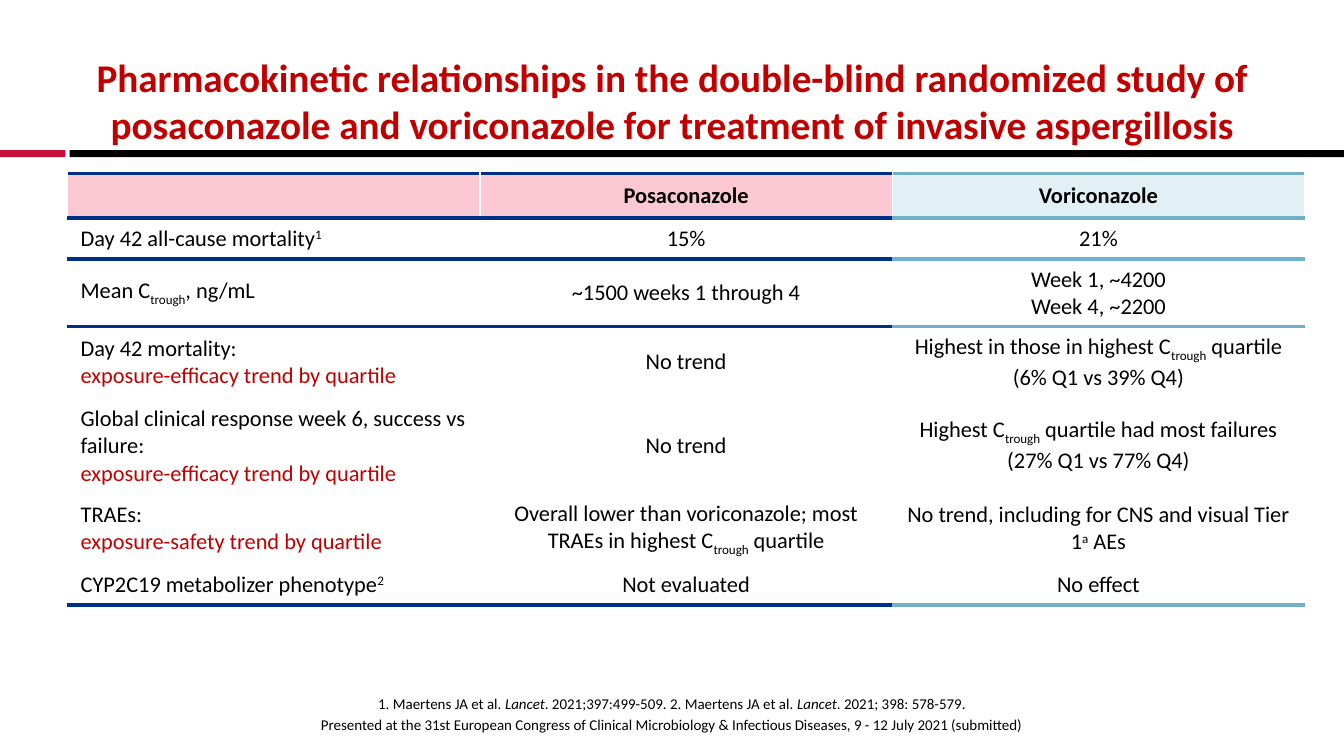
import dataclasses

import lxml.etree
import pptx
import pptx.dml.color
import pptx.enum.shapes
import pptx.enum.text
import pptx.oxml.ns
import pptx.util

WIDTH, HEIGHT = 13.33, 7.5
CENTER = pptx.enum.text.PP_ALIGN.CENTER
LEFT = pptx.enum.text.PP_ALIGN.LEFT


@dataclasses.dataclass(frozen=True)
class Theme:
    font: str = "Calibri"
    title_size: float = 28
    table_size: float = 16
    footer_size: float = 10.7
    text: str = "000000"
    accent: str = "C00000"
    rule_dark: str = "000000"
    rule_red: str = "C50F3C"
    header_fills: tuple = ("FBC8D4", "FBC8D4", "E2EFF4")
    line_colors: tuple = ("002F87", "002F87", "70B1C9")
    line_width: float = 3


THEME = Theme()
BASELINES = {"super": "30000", "sub": "-25000"}
TROUGH = ("trough", "sub")
EFFICACY = [("exposure-efficacy trend by quartile", "accent")]

TITLE = [[("Pharmacokinetic relationships in the double-blind randomized study of "
           "posaconazole and voriconazole for treatment of invasive aspergillosis", "title")]]
FOOTER = [
    ["1. Maertens JA et al. ", ("Lancet", "italic"),
     ". 2021;397:499-509. 2. Maertens JA et al. ", ("Lancet", "italic"),
     ". 2021; 398: 578-579."],
    ["Presented at the 31st European Congress of Clinical Microbiology & Infectious "
     "Diseases, 9 - 12 July 2021 (submitted)"],
]
# Each row: number of text lines, then its cells as lists of paragraphs made of runs.
ROWS = [
    (1, [[], [[("Posaconazole", "bold")]], [[("Voriconazole", "bold")]]]),
    (1, [[["Day 42 all-cause mortality", ("1", "super")]], [["15%"]], [["21%"]]]),
    (2, [[["Mean C", TROUGH, ", ng/mL"]],
         [["~1500 weeks 1 through 4"]],
         [["Week 1, ~4200"], ["Week 4, ~2200"]]]),
    (2, [[["Day 42 mortality:"], EFFICACY],
         [["No trend"]],
         [["Highest in those in highest C", TROUGH, " quartile"], ["(6% Q1 vs 39% Q4)"]]]),
    (3, [[["Global clinical response week 6, success vs failure:"], EFFICACY],
         [["No trend"]],
         [["Highest C", TROUGH, " quartile had most failures"], ["(27% Q1 vs 77% Q4)"]]]),
    (2, [[["TRAEs:"], [("exposure-safety trend by quartile", "accent")]],
         [["Overall lower than voriconazole; most TRAEs in highest C", TROUGH, " quartile"]],
         [["No trend, including for CNS and visual Tier 1", ("a", "super"), " AEs"]]]),
    (1, [[["CYP2C19 metabolizer phenotype", ("2", "super")]],
         [["Not evaluated"]], [["No effect"]]]),
]
RULED_EDGES = {0, 1, 2, len(ROWS)}


def inches(*lengths):
    return [pptx.util.Inches(length) for length in lengths]


def rgb(color):
    return pptx.dml.color.RGBColor.from_string(color)


def add_run(paragraph, item, size):
    """Add one run; item is plain text or a (text, style) pair."""
    text, style = (item, "plain") if isinstance(item, str) else item
    run = paragraph.add_run()
    run.text = text
    font = run.font
    font.name, font.size = THEME.font, pptx.util.Pt(size)
    font.bold = style in ("bold", "title")
    font.italic = style == "italic"
    font.color.rgb = rgb(THEME.accent if style in ("accent", "title") else THEME.text)
    if style in BASELINES:
        run.font._element.set("baseline", BASELINES[style])


def write(frame, paragraphs, size, alignment, space_after=0):
    for index, runs in enumerate(paragraphs):
        paragraph = frame.add_paragraph() if index else frame.paragraphs[0]
        paragraph.alignment = alignment
        paragraph.space_after = pptx.util.Pt(space_after)
        for item in runs:
            add_run(paragraph, item, size)


def add_text(slide, box, paragraphs, size, anchor, space_after=0):
    frame = slide.shapes.add_textbox(*inches(*box)).text_frame
    frame.word_wrap = True
    frame.vertical_anchor = anchor
    write(frame, paragraphs, size, CENTER, space_after)


def add_bar(slide, left, width, color):
    bar = slide.shapes.add_shape(pptx.enum.shapes.MSO_SHAPE.RECTANGLE,
                                 *inches(left, 1.49, width, 0.07))
    bar.shadow.inherit = False
    bar.fill.solid()
    bar.fill.fore_color.rgb = rgb(color)
    bar.line.fill.background()


def add_border(cell, tag, color):
    """Put a border line first among the cell's properties."""
    properties = cell._tc.get_or_add_tcPr()
    name = pptx.oxml.ns.qn
    line = lxml.etree.Element(name(tag), w=str(pptx.util.Pt(THEME.line_width)))
    fill = lxml.etree.SubElement(line, name("a:solidFill"))
    lxml.etree.SubElement(fill, name("a:srgbClr"), val=color)
    properties.insert(0, line)


def format_cell(cell, row, column):
    cell.vertical_anchor = pptx.enum.text.MSO_ANCHOR.MIDDLE
    cell.margin_left = cell.margin_right = pptx.util.Inches(0.13)
    cell.margin_top = cell.margin_bottom = pptx.util.Inches(0.07)
    if row == 0:
        cell.fill.solid()
        cell.fill.fore_color.rgb = rgb(THEME.header_fills[column])
    else:
        cell.fill.background()
    for tag, edge in (("a:lnB", row + 1), ("a:lnT", row)):
        if edge in RULED_EDGES:
            add_border(cell, tag, THEME.line_colors[column])


def add_results_table(slide):
    heights = [0.4 + 0.27 * (lines - 1) for lines, _ in ROWS]
    columns = len(THEME.line_colors)
    table = slide.shapes.add_table(len(ROWS), columns,
                                   *inches(0.67, 1.72, 12.27, sum(heights))).table
    table.first_row = table.horz_banding = False
    for row, (_, cells) in enumerate(ROWS):
        table.rows[row].height = pptx.util.Inches(heights[row])
        for column, paragraphs in enumerate(cells):
            cell = table.cell(row, column)
            format_cell(cell, row, column)
            write(cell.text_frame, paragraphs, THEME.table_size, CENTER if column else LEFT)


def main():
    presentation = pptx.Presentation()
    presentation.slide_width, presentation.slide_height = inches(WIDTH, HEIGHT)
    slide = presentation.slides.add_slide(presentation.slide_layouts[6])
    add_bar(slide, 0.69, WIDTH - 0.69, THEME.rule_dark)
    add_bar(slide, 0, 0.65, THEME.rule_red)
    anchors = pptx.enum.text.MSO_ANCHOR
    add_text(slide, (0.67, 0.37, WIDTH - 2 * 0.67, 1.26), TITLE, THEME.title_size,
             anchors.MIDDLE)
    add_results_table(slide)
    add_text(slide, (0, 6.71, WIDTH, 0.62), FOOTER, THEME.footer_size, anchors.BOTTOM, 2.2)
    presentation.save("out.pptx")


if __name__ == "__main__":
    main()
